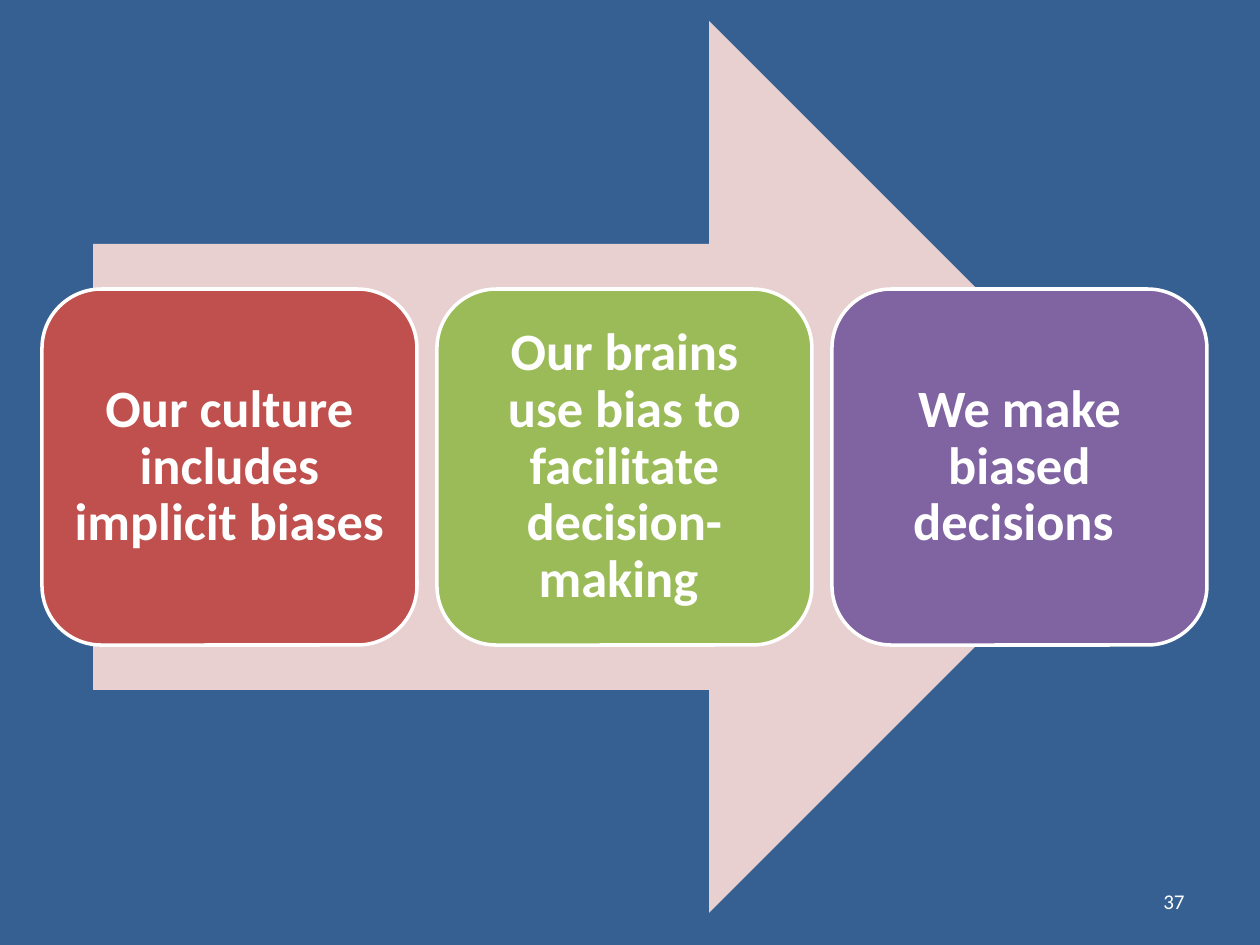
from collections import namedtuple
from dataclasses import dataclass

from pptx import Presentation
from pptx.dml.color import RGBColor
from pptx.enum.shapes import MSO_SHAPE
from pptx.enum.text import MSO_ANCHOR, PP_ALIGN
from pptx.util import Inches, Pt

Box = namedtuple("Box", "left top width height")


@dataclass(frozen=True)
class Theme:
    font: str = "Calibri"
    background: str = "376092"
    arrow: str = "E8D0D0"
    white: str = "FFFFFF"
    red: str = "C0504D"
    green: str = "9BBB59"
    purple: str = "8064A2"
    step_size: int = 30
    number_size: int = 12
    outline: int = 2


THEME = Theme()
STEPS = [
    ("Our culture includes implicit biases", THEME.red),
    ("Our brains use bias to facilitate decision-making ", THEME.green),
    ("We make biased decisions ", THEME.purple),
]


def px(length):
    return round(length * Inches(1) / 126)


def place(box):
    return [px(length) for length in box]


def set_all(target, values):
    for name, value in values.items():
        setattr(target, name, value)


def write(shape, text, frame_format, para_format, font_format):
    set_all(shape.text_frame, {
        "word_wrap": True, "vertical_anchor": MSO_ANCHOR.MIDDLE, **frame_format})
    para = shape.text_frame.paragraphs[0]
    set_all(para, para_format)
    span = para.add_run()
    span.text = text
    set_all(span.font, {"name": THEME.font, **font_format})
    span.font.color.rgb = RGBColor.from_string(THEME.white)


def add_filled(shapes, kind, box, color):
    shape = shapes.add_shape(kind, *place(box))
    shape.shadow.inherit = False
    shape.fill.solid()
    shape.fill.fore_color.rgb = RGBColor.from_string(color)
    shape.line.fill.background()
    return shape


def add_step(shapes, box, text, color):
    card = add_filled(shapes, MSO_SHAPE.ROUNDED_RECTANGLE, box, color)
    card.line.color.rgb = RGBColor.from_string(THEME.white)
    card.line.width = Pt(THEME.outline)
    sides = ("left", "top", "right", "bottom")
    write(card, text,
          {f"margin_{side}": px(15) for side in sides},
          {"alignment": PP_ALIGN.CENTER, "line_spacing": 0.9},
          {"size": Pt(THEME.step_size), "bold": True})


def add_process(page, box, steps):
    shapes = page.shapes.add_group_shape().shapes
    arrow_box = Box(box.left + 51, box.top, 1062, box.height)
    add_filled(shapes, MSO_SHAPE.RIGHT_ARROW, arrow_box, THEME.arrow)
    gap = 20
    width = (box.width - gap * (len(steps) - 1)) // len(steps)
    height = box.height * 2 // 5
    top = box.top + (box.height - height) // 2
    for index, (text, color) in enumerate(steps):
        left = box.left + index * (width + gap)
        add_step(shapes, Box(left, top, width, height), text, color)


def add_page_number(page, box, number):
    label = page.shapes.add_textbox(*place(box))
    write(label, number, {}, {"alignment": PP_ALIGN.RIGHT},
          {"size": Pt(THEME.number_size)})


def main():
    deck = Presentation()
    set_all(deck, {"slide_width": px(1260), "slide_height": px(945)})
    page = deck.slides.add_slide(deck.slide_layouts[6])
    page.background.fill.solid()
    page.background.fill.fore_color.rgb = RGBColor.from_string(THEME.background)
    add_page_number(page, Box(903, 876, 294, 50), "37")
    add_process(page, Box(42, 21, 1166, 892), STEPS)
    deck.save("out.pptx")


if __name__ == "__main__":
    main()
